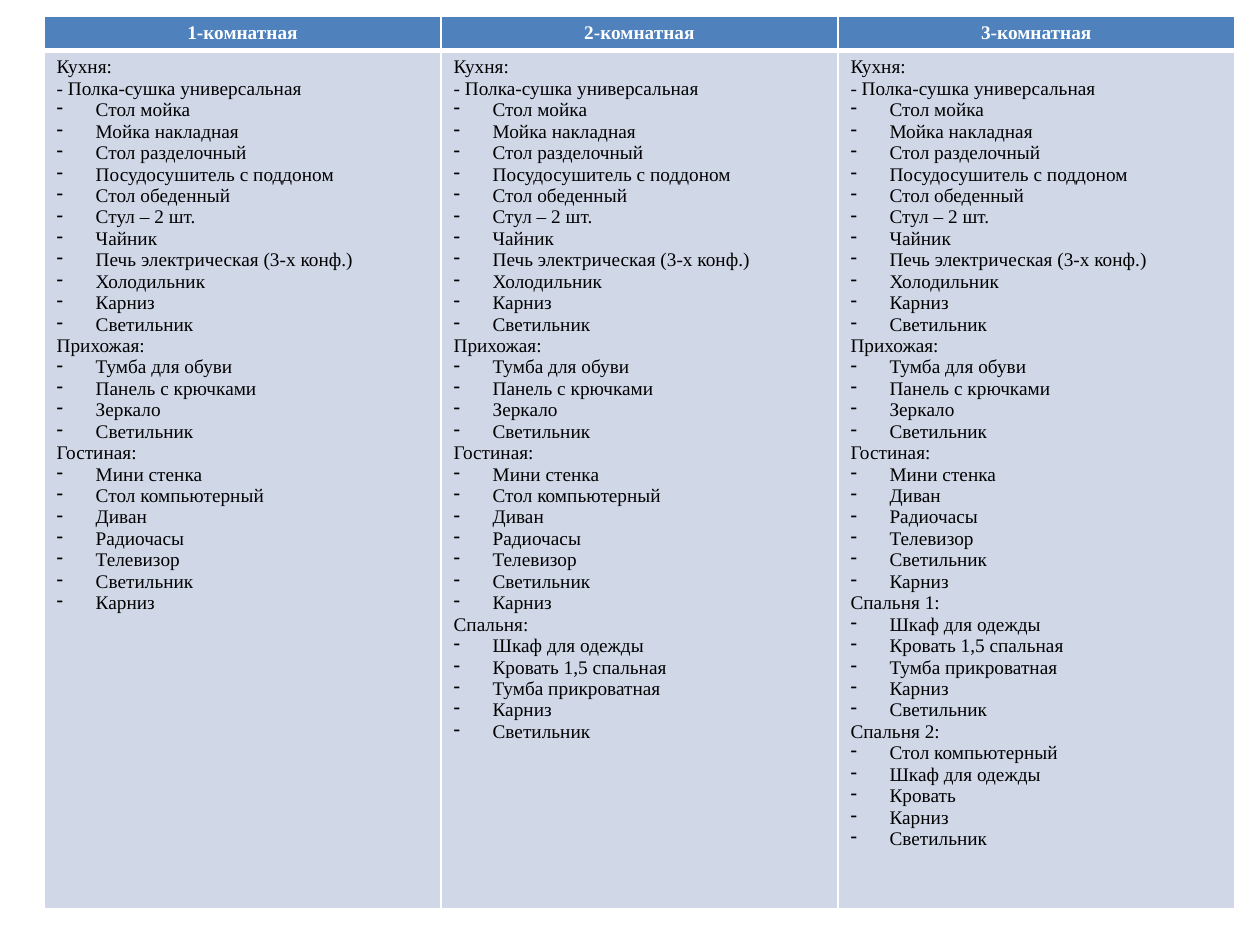
import pptx
import pptx.dml.color
import pptx.enum.text
import pptx.util
from lxml import etree
from pptx.oxml.ns import qn

RGBColor = pptx.dml.color.RGBColor
Inches = pptx.util.Inches
Pt = pptx.util.Pt

WHITE = RGBColor(0xFF, 0xFF, 0xFF)
BLACK = RGBColor(0x00, 0x00, 0x00)
HEADER_BLUE = RGBColor(0x4F, 0x81, 0xBD)
BODY_BLUE = RGBColor(0xD0, 0xD8, 0xE8)

FONT = "Times New Roman"
TEXT_SIZE = Pt(11)
HANGING = Inches(0.31)
COLUMN_WIDTH = Inches(3.15)
HEADER_HEIGHT = Inches(0.27)
BODY_HEIGHT = Inches(6.81)
THIN, THICK = Pt(1), Pt(3)

# Furniture by room; the plain lines carry no bullet
SHELF = "- Полка-сушка универсальная"
KITCHEN = ("Кухня:", [
    SHELF, "Стол мойка", "Мойка накладная", "Стол разделочный",
    "Посудосушитель с поддоном", "Стол обеденный", "Стул – 2 шт.", "Чайник",
    "Печь электрическая (3-х конф.)", "Холодильник", "Карниз", "Светильник"])
HALLWAY = ("Прихожая:", [
    "Тумба для обуви", "Панель с крючками", "Зеркало", "Светильник"])
LIVING_ITEMS = ["Диван", "Радиочасы", "Телевизор", "Светильник", "Карниз"]
LIVING_WITH_DESK = ("Гостиная:", ["Мини стенка", "Стол компьютерный"] + LIVING_ITEMS)
LIVING = ("Гостиная:", ["Мини стенка"] + LIVING_ITEMS)
BEDROOM_ITEMS = ["Шкаф для одежды", "Кровать 1,5 спальная",
                 "Тумба прикроватная", "Карниз", "Светильник"]
SECOND_BEDROOM = ("Спальня 2:", [
    "Стол компьютерный", "Шкаф для одежды", "Кровать", "Карниз", "Светильник"])

FLATS = {
    "1-комнатная": [KITCHEN, HALLWAY, LIVING_WITH_DESK],
    "2-комнатная": [KITCHEN, HALLWAY, LIVING_WITH_DESK, ("Спальня:", BEDROOM_ITEMS)],
    "3-комнатная": [KITCHEN, HALLWAY, LIVING, ("Спальня 1:", BEDROOM_ITEMS),
                    SECOND_BEDROOM],
}


def style_cell(cell, fill, top, bottom):
    """Draw the white borders, then fill the cell."""
    properties = cell._tc.get_or_add_tcPr()
    for side, width in (("L", THIN), ("R", THIN), ("T", top), ("B", bottom)):
        border = etree.SubElement(properties, qn(f"a:ln{side}"), w=str(width))
        solid = etree.SubElement(border, qn("a:solidFill"))
        etree.SubElement(solid, qn("a:srgbClr"), val=str(WHITE))
    cell.fill.solid()
    cell.fill.fore_color.rgb = fill


def add_text(paragraph, text, color, bold=False):
    run = paragraph.add_run()
    run.text = text
    run.font.name = FONT
    run.font.size = TEXT_SIZE
    run.font.bold = bold
    run.font.color.rgb = color


def add_dash(paragraph):
    """Give the paragraph a dash bullet with a hanging indent."""
    properties = paragraph._p.get_or_add_pPr()
    properties.set("marL", str(HANGING))
    properties.set("indent", str(-HANGING))
    etree.SubElement(properties, qn("a:buFontTx"))
    etree.SubElement(properties, qn("a:buChar"), char="-")


def fill_header(cell, title):
    style_cell(cell, HEADER_BLUE, THIN, THICK)
    paragraph = cell.text_frame.paragraphs[0]
    paragraph.alignment = pptx.enum.text.PP_ALIGN.CENTER
    add_text(paragraph, title, WHITE, bold=True)


def fill_rooms(cell, rooms):
    style_cell(cell, BODY_BLUE, THICK, THIN)
    frame = cell.text_frame
    lines = [(line, line not in (room, SHELF))
             for room, items in rooms for line in [room] + items]
    for index, (line, dashed) in enumerate(lines):
        paragraph = frame.add_paragraph() if index else frame.paragraphs[0]
        if dashed:
            add_dash(paragraph)
        add_text(paragraph, line, BLACK)


def add_flats_table(slide):
    table = slide.shapes.add_table(
        2, len(FLATS), Inches(0.35), Inches(0.13),
        COLUMN_WIDTH * len(FLATS), HEADER_HEIGHT + BODY_HEIGHT).table
    table.horz_banding = False
    table.rows[0].height = HEADER_HEIGHT
    table.rows[1].height = BODY_HEIGHT
    for column, (title, rooms) in enumerate(FLATS.items()):
        table.columns[column].width = COLUMN_WIDTH
        fill_header(table.cell(0, column), title)
        fill_rooms(table.cell(1, column), rooms)


def main():
    deck = pptx.Presentation()
    deck.slide_width, deck.slide_height = Inches(10), Inches(7.5)
    slide = deck.slides.add_slide(deck.slide_layouts[6])
    add_flats_table(slide)
    deck.save("out.pptx")


if __name__ == "__main__":
    main()
